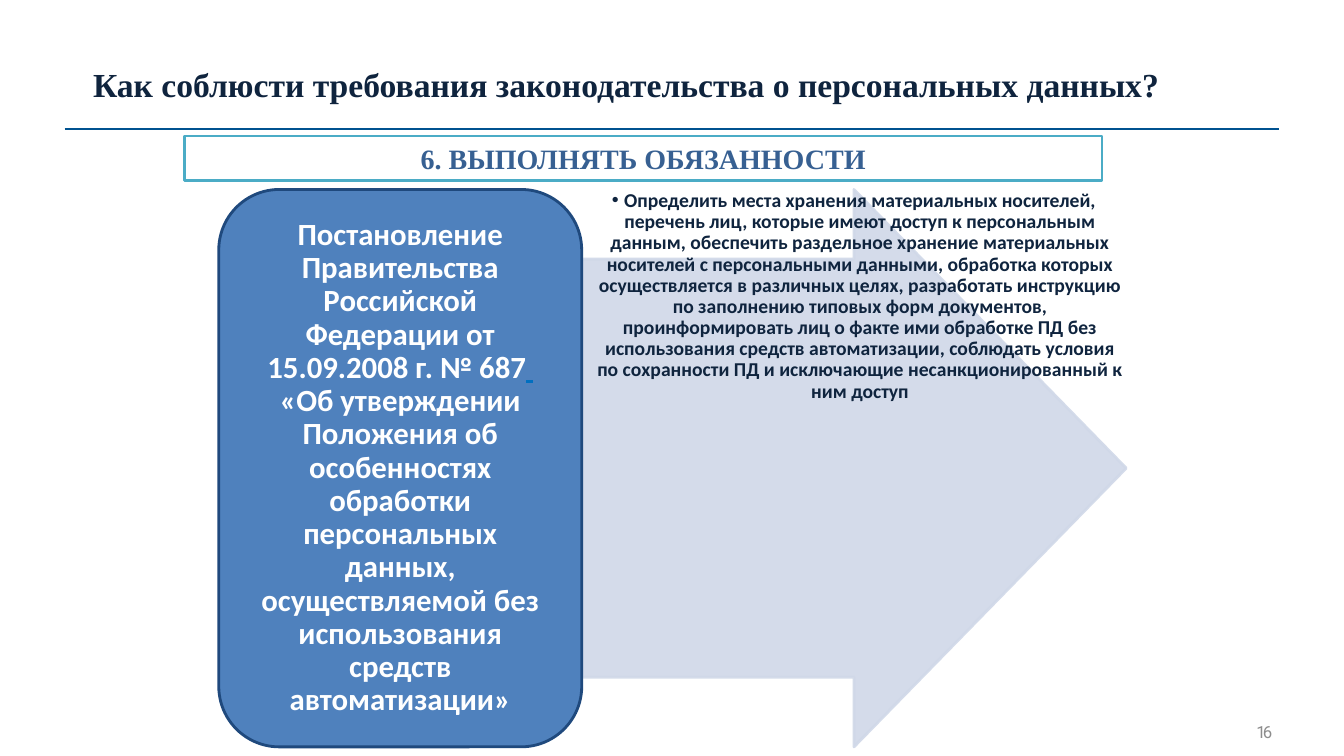
from dataclasses import dataclass

from lxml.etree import SubElement
from pptx import Presentation
from pptx.dml.color import RGBColor
from pptx.enum.shapes import MSO_CONNECTOR as Connector, MSO_SHAPE as Preset
from pptx.enum.text import MSO_ANCHOR as Anchor, MSO_AUTO_SIZE as AutoSize, PP_ALIGN as Align
from pptx.oxml.ns import qn
from pptx.util import Emu, Inches, Pt

CELL = Inches(0.1)  # the slide is a grid of 133.3 columns by 75 rows


@dataclass(frozen=True)
class Theme:
    serif: str = "Times New Roman"
    sans: str = "Calibri"
    number_font: str = "Roboto"
    ink: str = "0F243E"
    heading: str = "376092"
    white: str = "FFFFFF"
    teal: str = "4BACC6"
    blue: str = "4F81BD"
    navy: str = "1F497D"
    pale: str = "D0D8E8"
    rule: str = "005290"
    link: str = "006FC0"
    grey: str = "8D8D8D"
    title_size: int = 24
    banner_size: int = 20
    decree_size: int = 22
    duty_size: int = 14
    number_size: int = 12


@dataclass(frozen=True)
class Area:
    column: float
    row: float
    columns: float
    rows: float

    def frame(self) -> tuple[Emu, ...]:
        return tuple(Emu(round(cells * CELL)) for cells in
                     (self.column, self.row, self.columns, self.rows))


@dataclass(frozen=True)
class Span:
    text: str
    font: str
    size: int
    color: str
    bold: bool = True
    underline: bool = False


@dataclass(frozen=True)
class Block:
    preset: Preset
    area: Area
    fill: str
    line: str
    opacity: int = 100
    margins: tuple[float, float] = (0.1, 0.05)
    spacing: float = 1
    spans: tuple[Span, ...] = ()


THEME = Theme()
TITLE_AREA = Area(6.7, 5.8, 110.8, 5)
ARROW_AREA = Area(57.7, 18.8, 54, 55.3)
DECREE_AREA = Area(21.7, 18.8, 36, 55.3)
NUMBER_AREA = Area(124.2, 71.6, 2.1, 2.1)
RULE_AREA = Area(6.4, 12.8, 120.5, 0)

TITLE = Span("Как соблюсти требования законодательства о персональных данных?",
             THEME.serif, THEME.title_size, THEME.ink)
DUTY = Span(
    "Определить места хранения материальных носителей, перечень лиц, которые имеют доступ "
    "к персональным данным, обеспечить раздельное хранение материальных носителей "
    "с персональными данными, обработка которых осуществляется в различных целях, "
    "разработать инструкцию по заполнению типовых форм документов, проинформировать лиц "
    "о факте ими обработке ПД без использования средств автоматизации, соблюдать условия "
    "по сохранности ПД и исключающие несанкционированный к ним доступ",
    THEME.sans, THEME.duty_size, THEME.ink)
NUMBER = Span("16", THEME.number_font, THEME.number_size, THEME.grey, bold=False)
BANNER = Block(
    Preset.RECTANGLE, Area(18.3, 13.5, 91, 4.4), THEME.white, THEME.teal,
    spans=(Span("6. ВЫПОЛНЯТЬ ОБЯЗАННОСТИ", THEME.serif, THEME.banner_size, THEME.heading),))
ARROW = Block(Preset.RIGHT_ARROW, ARROW_AREA, THEME.pale, THEME.pale, opacity=90)
DECREE = Block(
    Preset.ROUNDED_RECTANGLE, DECREE_AREA, THEME.blue, THEME.navy,
    margins=(0.09, 0.05), spacing=0.9,
    spans=(
        Span("Постановление Правительства Российской Федерации от 15.09.2008 г. № 687",
             THEME.sans, THEME.decree_size, THEME.white),
        Span(" ", THEME.sans, THEME.decree_size, THEME.link, underline=True),
        Span(" «Об утверждении Положения об особенностях обработки персональных данных, "
             "осуществляемой без использования средств автоматизации»",
             THEME.sans, THEME.decree_size, THEME.white),
    ))


def apply(target, **values) -> None:
    for name, value in values.items():
        setattr(target, name, value)


def place(shape, area: Area) -> None:
    apply(shape, **dict(zip(("left", "top", "width", "height"), area.frame())))


def write(shape, spans: tuple[Span, ...], anchor: Anchor,
          margins: tuple[float, float] = (0.1, 0.05), spacing: float = 1,
          align: Align = Align.CENTER, wrap: bool = True):
    """Fill the shape with one paragraph of spans and return the paragraph."""
    side, end = (Inches(margin) for margin in margins)
    frame = shape.text_frame
    apply(frame, margin_left=side, margin_right=side, margin_top=end, margin_bottom=end,
          vertical_anchor=anchor, word_wrap=wrap, auto_size=AutoSize.NONE)
    para = frame.paragraphs[0]
    apply(para, alignment=align, line_spacing=spacing, space_before=Pt(0))
    for span in spans:
        run = para.add_run()
        run.text = span.text
        apply(run.font, name=span.font, size=Pt(span.size), bold=span.bold,
              underline=span.underline)
        run.font.color.rgb = RGBColor.from_string(span.color)
    return para


def set_opacity(fill_format, percent: int) -> None:
    color = fill_format.find(".//" + qn("a:srgbClr"))
    SubElement(color, qn("a:alpha")).set("val", str(percent * 1000))


def add_block(page, block: Block) -> None:
    shape = page.shapes.add_shape(block.preset, *block.area.frame())
    shape.shadow.inherit = False
    shape.fill.solid()
    shape.fill.fore_color.rgb = RGBColor.from_string(block.fill)
    shape.line.color.rgb = RGBColor.from_string(block.line)
    shape.line.width = Pt(2)
    if block.preset == Preset.RIGHT_ARROW:
        shape.adjustments[0] = 0.75
        shape.adjustments[1] = 0.5
    if block.opacity < 100:
        properties = shape._element.spPr
        set_opacity(properties.find(qn("a:solidFill")), block.opacity)
        set_opacity(properties.find(qn("a:ln")), block.opacity)
    if block.spans:
        write(shape, block.spans, Anchor.MIDDLE, block.margins, block.spacing)


def add_rule(page) -> None:
    left, top, width, height = RULE_AREA.frame()
    rule = page.shapes.add_connector(Connector.STRAIGHT, left, top, left + width, top + height)
    rule.line.color.rgb = RGBColor.from_string(THEME.rule)
    rule.line.width = Pt(1)
    SubElement(rule._element.spPr, qn("a:effectLst"))


def add_number(page) -> None:
    box = page.shapes.add_textbox(*NUMBER_AREA.frame())
    para = write(box, (NUMBER,), Anchor.TOP, (0, 0), align=Align.LEFT, wrap=False)
    para._p.get_or_add_pPr().set("marL", str(Inches(0.04)))
    para.runs[0].font._element.set("spc", "-210")


def add_duties(page, body) -> None:
    """Bring the body placeholder in front of the arrow and bullet its text."""
    page.shapes._spTree.append(body._element)
    place(body, ARROW_AREA)
    para = write(body, (DUTY,), Anchor.TOP, (0.01, 0.01), 0.9)
    properties = para._p.get_or_add_pPr()
    properties.set("marL", str(Inches(0.12)))
    properties.set("indent", str(-Inches(0.12)))
    SubElement(properties, qn("a:buChar")).set("char", "•")


def main() -> None:
    deck = Presentation()
    apply(deck, slide_width=Inches(13.33), slide_height=Inches(7.5))
    page = deck.slides.add_slide(deck.slide_layouts[1])
    title, body = page.placeholders
    place(title, TITLE_AREA)
    write(title, (TITLE,), Anchor.TOP)
    add_rule(page)
    add_number(page)
    add_block(page, BANNER)
    add_block(page, ARROW)
    add_duties(page, body)
    add_block(page, DECREE)
    deck.save("out.pptx")


if __name__ == "__main__":
    main()
